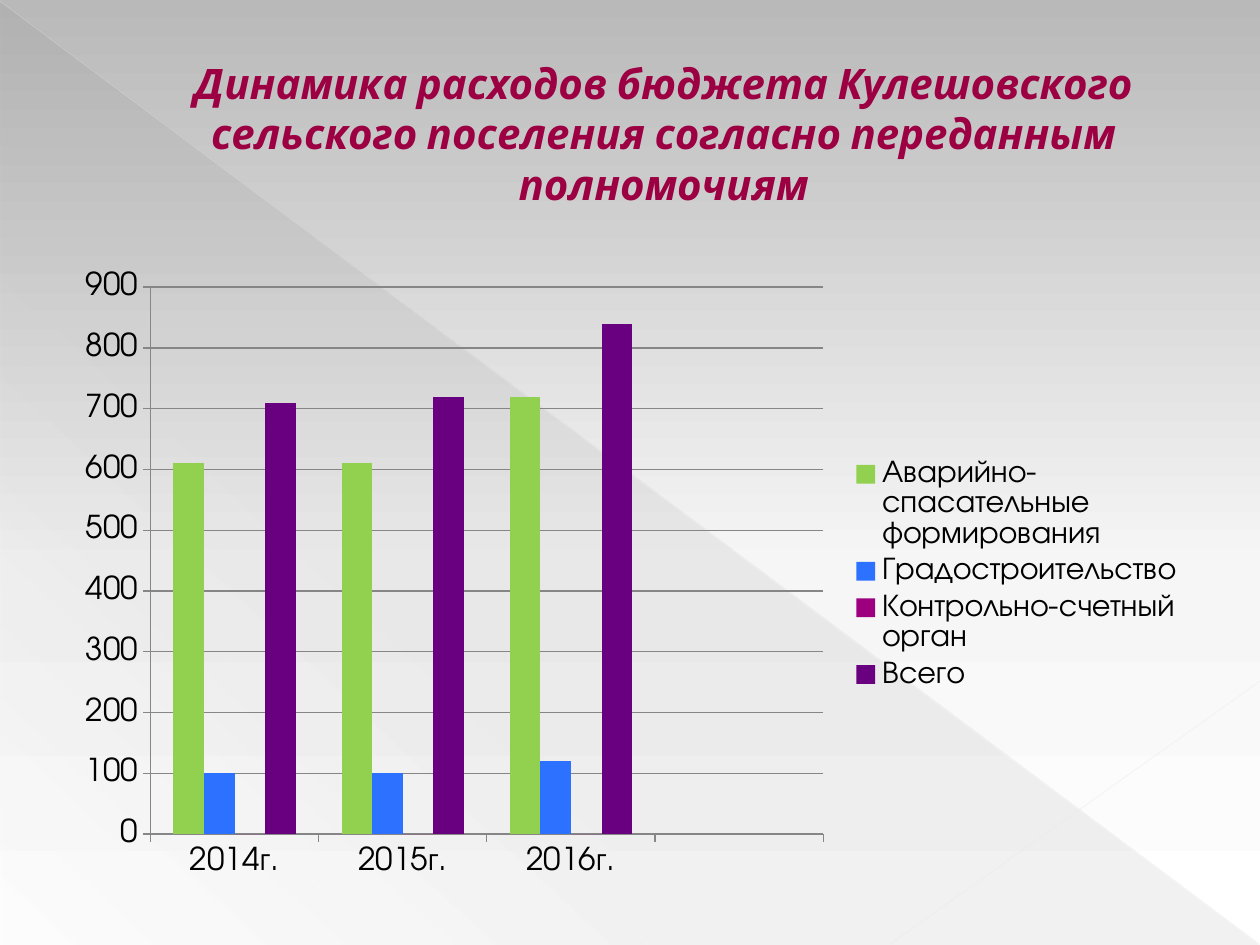
from lxml.etree import SubElement
from pptx import Presentation
from pptx.chart.data import CategoryChartData
from pptx.dml.color import RGBColor
from pptx.enum.chart import XL_CHART_TYPE, XL_LEGEND_POSITION, XL_TICK_MARK
from pptx.enum.shapes import MSO_CONNECTOR, MSO_SHAPE
from pptx.enum.text import MSO_ANCHOR, PP_ALIGN
from pptx.oxml.ns import qn
from pptx.util import Cm, Pt

COLORS = {
    "title": "9C0042", "edge": "B12761", "text": "000000", "grid": "868686",
    "shade": "666666", "long": "E8E8E8", "short": "EAEAEA",
    "top": "B9B9B9", "middle": "F6F6F6", "bottom": "FFFFFF",
    "green": "92D050", "blue": "2C71FF", "plum": "9C007F", "violet": "68007F",
}
YEARS = ["2014г.", "2015г.", "2016г.", ""]
SERIES = [
    ("Аварийно-спасательные формирования", "green", [610, 610, 720, None]),
    ("Градостроительство", "blue", [100, 100, 120, None]),
    ("Контрольно-счетный орган", "plum", [0, 0, 0, None]),
    ("Всего", "violet", [710, 720, 840, None]),
]


def rgb(name):
    return RGBColor.from_string(COLORS[name])


def add_color(parent, name, alpha=100):
    color = SubElement(parent, qn("a:srgbClr"), val=COLORS[name])
    if alpha < 100:
        SubElement(color, qn("a:alpha"), val=str(alpha * 1000))


class Deck:
    def __init__(self):
        self.show = Presentation()
        self.show.slide_width, self.show.slide_height = Cm(25.4), Cm(19.05)
        self.slide = self.show.slides.add_slide(self.show.slide_layouts[6])
        self.font = "TeX Gyre Adventor"
        self.size = Pt(18)

    def blend(self, fill, element, stops, angle):
        """Fill with (percent, colour, opacity) stops; angle is clockwise."""
        fill.gradient()
        grad = element.xpath(".//a:gradFill")[0]
        items = grad.find(qn("a:gsLst"))
        for old in list(items):
            items.remove(old)
        for place, name, alpha in stops:
            stop = SubElement(items, qn("a:gs"), pos=str(place * 1000))
            add_color(stop, name, alpha)
        grad.find(qn("a:lin")).set("ang", str(angle * 60000))

    def backdrop(self):
        stops = [(0, "top", 100), (60, "middle", 100), (100, "bottom", 100)]
        self.blend(self.slide.background.fill, self.slide.element, stops, 90)

    def corner(self, x, y, width, height):
        shape = self.slide.shapes.add_shape(
            MSO_SHAPE.RIGHT_TRIANGLE, Cm(x), Cm(y), Cm(width), Cm(height))
        shape.shadow.inherit = False
        shape.line.fill.background()
        stops = [(0, "shade", 10), (70, "shade", 8), (100, "shade", 1)]
        self.blend(shape.fill, shape.element, stops, 133)

    def line(self, start, end, color, width, alpha):
        line = self.slide.shapes.add_connector(
            MSO_CONNECTOR.STRAIGHT, *map(Cm, start + end))
        line.line.width = Pt(width)
        line.line.color.rgb = rgb(color)
        paint = line.element.xpath(".//a:ln/a:solidFill/a:srgbClr")[0]
        SubElement(paint, qn("a:alpha"), val=str(alpha * 1000))
        SubElement(line.element.xpath("./p:spPr")[0], qn("a:effectLst"))

    def title(self, text, x, y, width, height):
        box = self.slide.shapes.add_textbox(Cm(x), Cm(y), Cm(width), Cm(height))
        frame = box.text_frame
        frame.word_wrap = True
        frame.vertical_anchor = MSO_ANCHOR.MIDDLE
        frame.text = text
        para = frame.paragraphs[0]
        para.alignment = PP_ALIGN.CENTER
        para._p.get_or_add_pPr().set("marL", str(Cm(1.35)))
        font = para.runs[0].font
        font.name, font.size = "Cabin", Pt(24)
        font.bold = font.italic = True
        font.color.rgb = rgb("title")
        props = para.runs[0]._r.get_or_add_rPr()
        edge = SubElement(props, qn("a:ln"), w=str(Pt(0.5)))
        add_color(SubElement(edge, qn("a:solidFill")), "edge")
        props.insert(0, edge)

    def chart(self, x, y, width, height):
        data = CategoryChartData()
        data.categories = YEARS
        for name, _, values in SERIES:
            data.add_series(name, values)
        chart = self.slide.shapes.add_chart(
            XL_CHART_TYPE.COLUMN_CLUSTERED,
            Cm(x), Cm(y), Cm(width), Cm(height), data).chart
        chart.has_title = False
        chart.font.name, chart.font.size = self.font, self.size
        chart.font.color.rgb = rgb("text")
        chart.has_legend = True
        chart.legend.position = XL_LEGEND_POSITION.RIGHT
        chart.legend.include_in_layout = False
        plot = chart.plots[0]
        plot.gap_width, plot.overlap = 150, 0
        plot.vary_by_categories = False
        for series, (_, color, _) in zip(plot.series, SERIES):
            series.format.fill.solid()
            series.format.fill.fore_color.rgb = rgb(color)
        scale = chart.value_axis
        scale.minimum_scale, scale.maximum_scale = 0, 900
        scale.major_unit = 100
        scale.has_major_gridlines = True
        for axis in (chart.category_axis, scale):
            axis.major_tick_mark = XL_TICK_MARK.OUTSIDE
        for part in (chart.category_axis, scale, scale.major_gridlines):
            part.format.line.color.rgb = rgb("grid")
            part.format.line.width = Pt(0.75)


def main():
    deck = Deck()
    deck.backdrop()
    deck.corner(0.02, 0.04, 25.36, 19)
    deck.line((0, 0.02), (25.38, 19.03), "long", 0.39, 35)
    deck.line((25.4, 13.73), (17.95, 19.03), "short", 0.47, 45)
    deck.title("Динамика расходов бюджета Кулешовского сельского поселения "
               "согласно переданным полномочиям", 1.27, 0.74, 22.86, 3.89)
    deck.chart(1.27, 5.23, 22.86, 12.7)
    deck.show.save("out.pptx")


if __name__ == "__main__":
    main()
